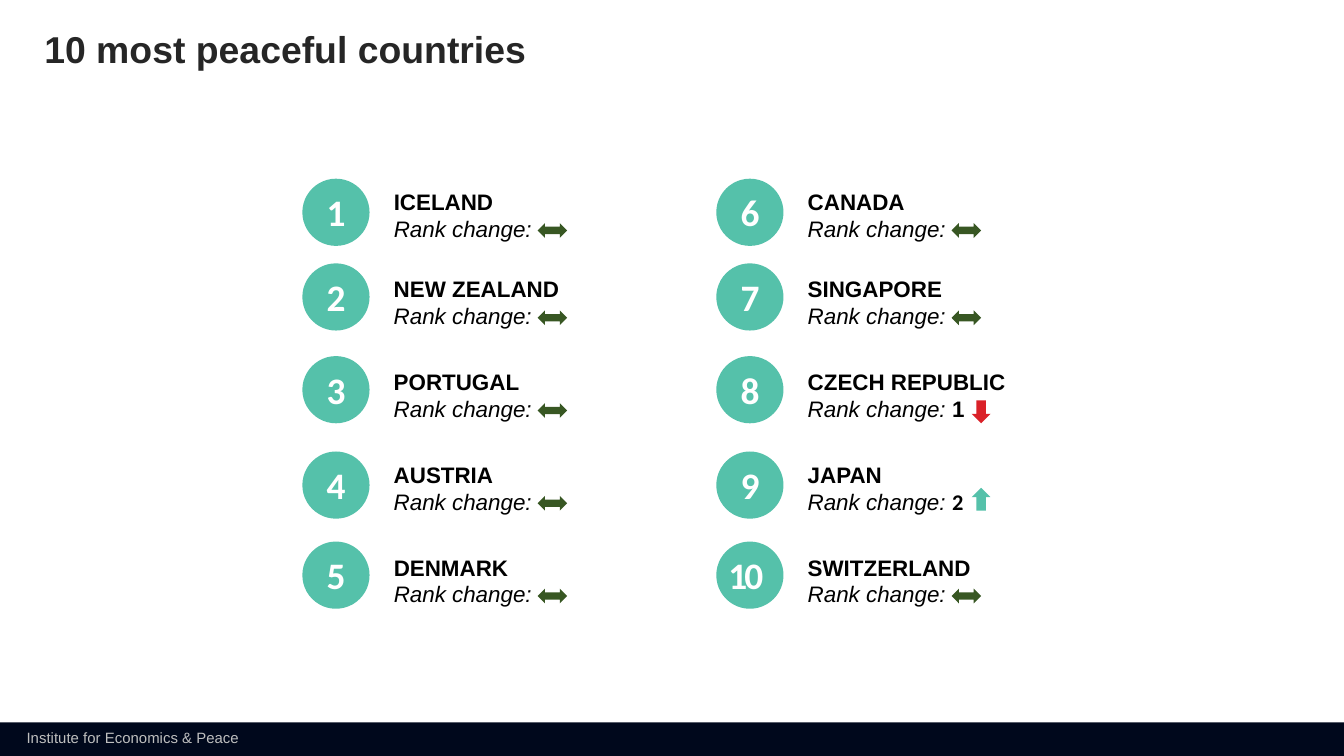
import pptx
import pptx.util
import pptx.dml.color
import pptx.enum.shapes
import pptx.enum.text

Inches, Pt = pptx.util.Inches, pptx.util.Pt
RGBColor = pptx.dml.color.RGBColor
MSO_SHAPE = pptx.enum.shapes.MSO_SHAPE
PP_ALIGN = pptx.enum.text.PP_ALIGN
MSO_ANCHOR = pptx.enum.text.MSO_ANCHOR
MSO_AUTO_SIZE = pptx.enum.text.MSO_AUTO_SIZE

# Content: country, places moved, font of the figure, text box width
TITLE = "10 most peaceful countries"
FOOTER = "Institute for Economics & Peace"
COUNTRIES = [
    ("ICELAND", 0, None, 1.21),
    ("NEW ZEALAND", 0, None, 1.4),
    ("PORTUGAL", 0, None, 1.4),
    ("AUSTRIA", 0, None, 1.4),
    ("DENMARK", 0, None, 1.31),
    ("CANADA", 0, None, 1.21),
    ("SINGAPORE", 0, None, 1.38),
    ("CZECH REPUBLIC", -1, "Arial", 2.08),
    ("JAPAN", 2, "Calibri", 1.37),
    ("SWITZERLAND", 0, None, 2.08),
]

# Colours
NAVY = RGBColor(0x00, 0x08, 0x1C)
GREY = RGBColor(0xBF, 0xBF, 0xBF)
CHARCOAL = RGBColor(0x26, 0x26, 0x26)
BLACK = RGBColor(0, 0, 0)
WHITE = RGBColor(0xFF, 0xFF, 0xFF)
TEAL = RGBColor(0x55, 0xC1, 0xAA)
GREEN = RGBColor(0x38, 0x57, 0x23)
RED = RGBColor(0xDA, 0x21, 0x28)

# Grid, in inches, on a 16:9 slide
WIDTH = 10
HEIGHT = WIDTH * 9 / 16
COLUMNS = [2.25, 5.33]
CIRCLE_TOPS = [1.33, 1.96, 2.65, 3.36, 4.03]
LABEL_TOPS = [1.36, 2.01, 2.7, 3.39, 4.08]
CIRCLE = 0.5
BAR = 0.25


def set_font(font, size, color, name="Arial", bold=False, italic=False):
    font.name, font.size, font.bold, font.italic = name, Pt(size), bold, italic
    font.color.rgb = color


def add_shape(kind, x, y, w, h, color):
    sp = slide.shapes.add_shape(kind, Inches(x), Inches(y), Inches(w), Inches(h))
    sp.shadow.inherit = False
    sp.fill.solid()
    sp.fill.fore_color.rgb = color
    sp.line.fill.background()
    return sp


def add_text(x, y, w, h, wrap=True):
    sp = slide.shapes.add_textbox(Inches(x), Inches(y), Inches(w), Inches(h))
    sp.text_frame.word_wrap = wrap
    return sp.text_frame


def add_number(rank, x, y):
    two_digits = rank > 9
    w = 0.57 if two_digits else 0.42
    shift = -0.03 if two_digits else 0
    p = add_text(x + (CIRCLE - w) / 2 + shift, y + 0.03, w, 0.44).paragraphs[0]
    p.alignment = PP_ALIGN.CENTER
    r = p.add_run()
    r.text = str(rank)
    set_font(p.font, 20, WHITE, "Calibri", bold=True)
    if two_digits:
        r.font._element.set("spc", "-150")


def add_label(country, change, figure_font, x, y, w):
    tf = add_text(x, y, w, 0.48)
    tf.margin_left = tf.margin_right = Inches(0.08)
    tf.margin_top = tf.margin_bottom = Inches(0.04)
    p = tf.paragraphs[0]
    p.text = country
    set_font(p.font, 12, BLACK, bold=True)
    p = tf.add_paragraph()
    r = p.add_run()
    r.text = "Rank change: " if change else "Rank change:"
    set_font(r.font, 12, BLACK, italic=True)
    if change:
        r = p.add_run()
        r.text = str(abs(change))
        set_font(r.font, 12, BLACK, figure_font, bold=True)


def add_change_arrow(change, x, y):
    if not change:
        add_shape(MSO_SHAPE.LEFT_RIGHT_ARROW, x, y + 0.3, 0.22, 0.11, GREEN)
        return
    top = y + (0.24 if change > 0 else 0.28)
    sp = add_shape(MSO_SHAPE.UP_ARROW, x + 0.15, top, 0.14, 0.17,
                   TEAL if change > 0 else RED)
    sp.rotation = 0 if change > 0 else 180


prs = pptx.Presentation()
prs.slide_width, prs.slide_height = Inches(WIDTH), Inches(HEIGHT)
slide = prs.slides.add_slide(prs.slide_layouts[5])

# Footer bar
add_shape(MSO_SHAPE.RECTANGLE, 0, HEIGHT - BAR, WIDTH, BAR, NAVY)
p = add_text(0.1, HEIGHT - BAR, 1.8, 0.24, wrap=False).paragraphs[0]
p.text = FOOTER
set_font(p.font, 8, GREY)

# Title
title = slide.shapes.title
title.left, title.top = Inches(0.33), Inches(0.23)
title.width, title.height = Inches(4.44), Inches(0.3)
tf = title.text_frame
tf.margin_left = tf.margin_right = tf.margin_top = tf.margin_bottom = 0
tf.auto_size = MSO_AUTO_SIZE.NONE
tf.vertical_anchor = MSO_ANCHOR.TOP
p = tf.paragraphs[0]
p.text = TITLE
p.alignment = PP_ALIGN.LEFT
p.line_spacing = 0.9
set_font(p.font, 20, CHARCOAL, bold=True)

# Ranking: two columns of five, filled downwards
for i, (country, change, figure_font, label_width) in enumerate(COUNTRIES):
    column, row = divmod(i, len(CIRCLE_TOPS))
    x, circle_y, label_y = COLUMNS[column], CIRCLE_TOPS[row], LABEL_TOPS[row]
    add_label(country, change, figure_font, x + 0.6, label_y, label_width)
    add_shape(MSO_SHAPE.OVAL, x, circle_y, CIRCLE, CIRCLE, TEAL)
    add_number(i + 1, x, circle_y)
    add_change_arrow(change, x + 1.75, label_y)

prs.save("out.pptx")
